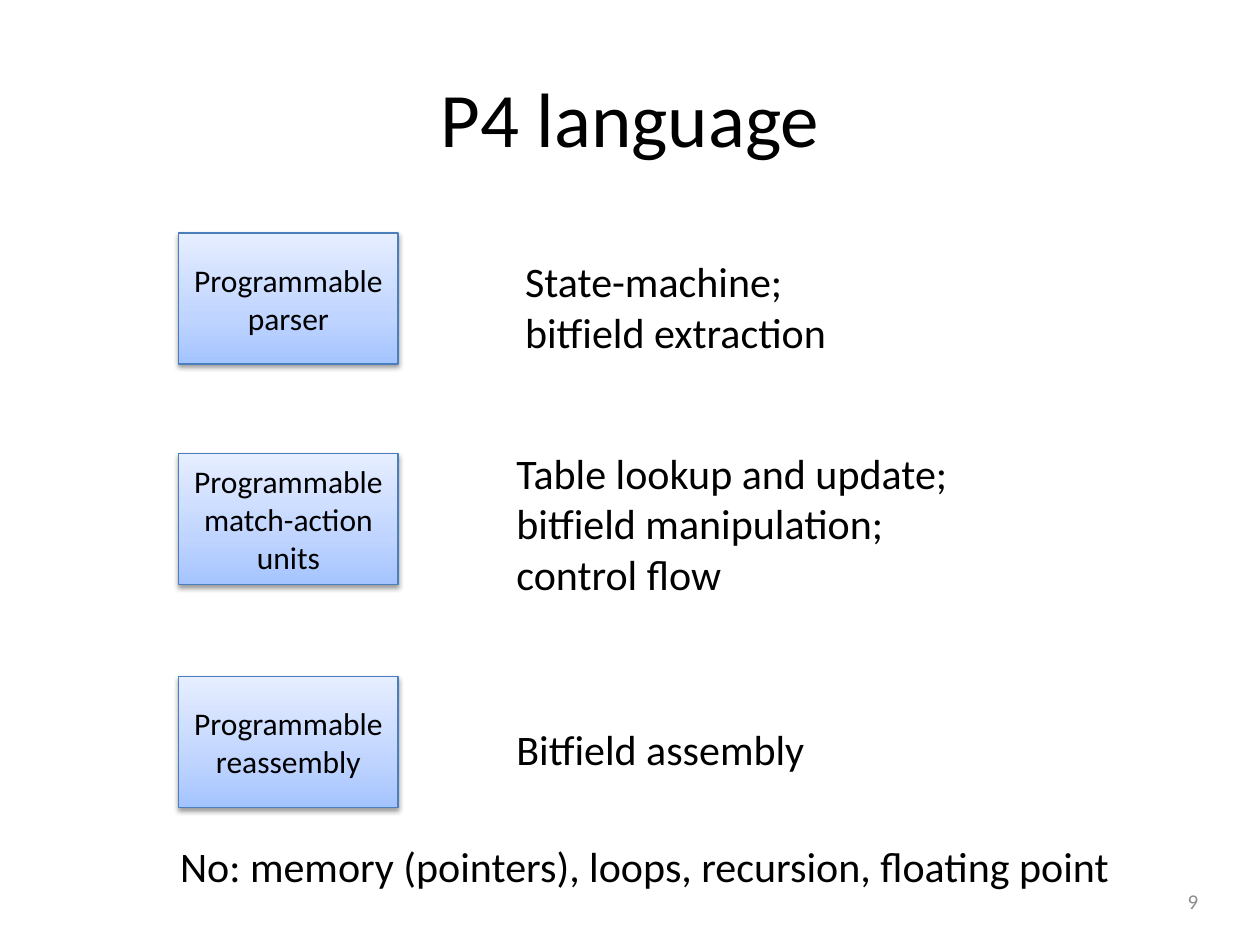
import pptx
import pptx.util
import pptx.dml.color
import pptx.enum.dml
import pptx.enum.shapes
import pptx.enum.text
import pptx.oxml
import pptx.oxml.ns

Pt = pptx.util.Pt
ALIGN = pptx.enum.text.PP_ALIGN
ANCHOR = pptx.enum.text.MSO_ANCHOR
AUTO_SIZE = pptx.enum.text.MSO_AUTO_SIZE

COLORS = {"text": "000000", "number": "8C8C8C", "border": "4B7EBC", "shadow": "000000"}
BOX_GRADIENT = [(0, "A4C4FF"), (35, "BFD4FF"), (100, "E6EEFF")]
FONT = "Calibri"

TITLE = "P4 language"
# Stage: top, label lines, then left, top, width, height and lines of its description
STAGES = [
    (133.2, ["Programmable", "parser"],
     (293, 142.6, 189.4, 65.5), ["State-machine; ", "bitfield extraction"]),
    (259.2, ["Programmable", "match-action", "units"],
     (288, 252, 265.7, 94.3),
     ["Table lookup and update;", "bitfield manipulation; ", "control flow"]),
    (386.6, ["Programmable", "reassembly"],
     (288, 409.7, 181.4, 36), ["Bitfield assembly"]),
]
LIMITS = "No: memory (pointers), loops, recursion, floating point"
SLIDE_NUMBER = "9"
BOX_LEFT, BOX_WIDTH, BOX_HEIGHT = 102.2, 125.3, 74.9


def rgb(name):
    return pptx.dml.color.RGBColor.from_string(COLORS[name])


def add_run(paragraph, text, size, color="text"):
    run = paragraph.add_run()
    run.text = text
    run.font.name = FONT
    run.font.size = Pt(size)
    run.font.color.rgb = rgb(color)


def add_text(slide, bounds, lines, size, color="text", align=ALIGN.LEFT,
             anchor=ANCHOR.TOP, wrap=False):
    """Add one paragraph whose lines are separated by line breaks."""
    frame = slide.shapes.add_textbox(*map(Pt, bounds)).text_frame
    frame.word_wrap = wrap
    frame.auto_size = AUTO_SIZE.NONE if wrap else AUTO_SIZE.SHAPE_TO_FIT_TEXT
    frame.vertical_anchor = anchor
    paragraph = frame.paragraphs[0]
    paragraph.alignment = align
    for index, line in enumerate(lines):
        if index:
            paragraph.add_line_break()
        add_run(paragraph, line, size, color)


def style_box(shape):
    """Apply the three-stop gradient, thin border and soft shadow."""
    namespace = pptx.oxml.ns.nsdecls("a")
    shape.fill.gradient()
    shape.fill.gradient_angle = 90
    stops = "".join(
        f'<a:gs pos="{position * 1000}"><a:srgbClr val="{color}"/></a:gs>'
        for position, color in BOX_GRADIENT)
    properties = shape._element.spPr
    old_stops = properties.find(".//" + pptx.oxml.ns.qn("a:gsLst"))
    old_stops.getparent().replace(
        old_stops, pptx.oxml.parse_xml(f"<a:gsLst {namespace}>{stops}</a:gsLst>"))
    shape.line.color.rgb = rgb("border")
    shape.line.width = Pt(0.75)
    shape.shadow.inherit = False
    properties.find(pptx.oxml.ns.qn("a:effectLst")).append(pptx.oxml.parse_xml(
        f'<a:outerShdw {namespace} blurRad="{Pt(3.1)}" dist="{Pt(1.6)}" '
        f'dir="5400000" rotWithShape="0"><a:srgbClr val="{COLORS["shadow"]}">'
        '<a:alpha val="38000"/></a:srgbClr></a:outerShdw>'))


def add_stage_box(slide, top, lines):
    shape = slide.shapes.add_shape(
        pptx.enum.shapes.MSO_SHAPE.RECTANGLE,
        Pt(BOX_LEFT), Pt(top), Pt(BOX_WIDTH), Pt(BOX_HEIGHT))
    style_box(shape)
    frame = shape.text_frame
    frame.vertical_anchor = ANCHOR.MIDDLE
    for index, line in enumerate(lines):
        paragraph = frame.add_paragraph() if index else frame.paragraphs[0]
        paragraph.alignment = ALIGN.CENTER
        add_run(paragraph, line, 18)


def main():
    presentation = pptx.Presentation()
    presentation.slide_width, presentation.slide_height = Pt(720), Pt(540)
    slide = presentation.slides.add_slide(presentation.slide_layouts[6])
    add_text(slide, (36, 21.6, 648, 90), [TITLE], 44,
             align=ALIGN.CENTER, anchor=ANCHOR.MIDDLE, wrap=True)
    for top, label, bounds, description in STAGES:
        add_stage_box(slide, top, label)
        add_text(slide, bounds, description, 24)
    add_text(slide, (95.8, 476.6, 553, 36), [LIMITS], 24)
    add_text(slide, (617, 500.4, 74.9, 28.8), [SLIDE_NUMBER], 12, "number",
             ALIGN.RIGHT, ANCHOR.MIDDLE, wrap=True)
    presentation.save("out.pptx")


if __name__ == "__main__":
    main()
